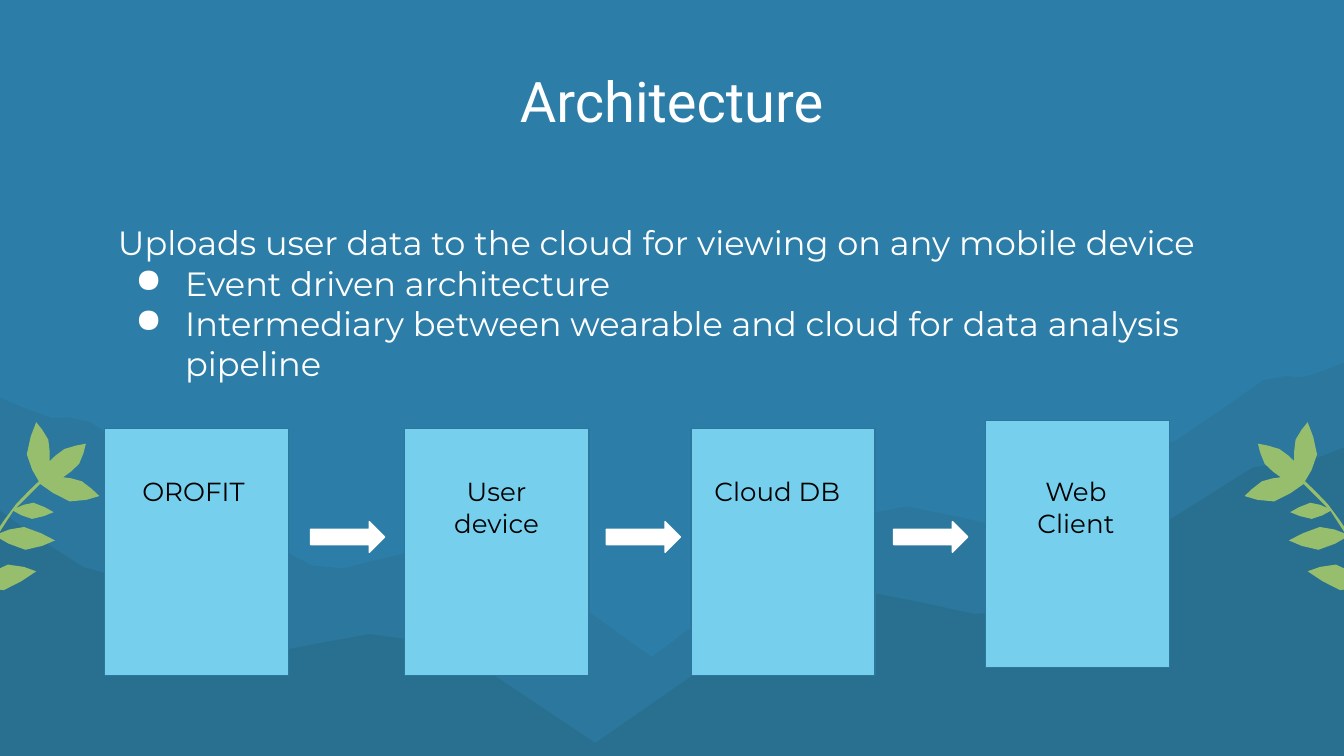
"""Builds the architecture slide: a wavy backdrop, bullet text and a four-step flow."""
import dataclasses

import pptx
import pptx.dml.color
import pptx.enum.shapes
import pptx.enum.text
import pptx.oxml
import pptx.oxml.ns
import pptx.util

Cm = pptx.util.Cm
Pt = pptx.util.Pt
SHAPE = pptx.enum.shapes.MSO_SHAPE
ALIGN = pptx.enum.text.PP_ALIGN
ANCHOR = pptx.enum.text.MSO_ANCHOR
AUTO = pptx.enum.text.MSO_AUTO_SIZE


@dataclasses.dataclass(frozen=True)
class Theme:
    """Colours, fonts and type sizes of the slide."""
    sky: str = "2C7EA8"
    far_hill: str = "2B779D"
    near_hill: str = "297090"
    leaf: str = "97BE6D"
    card: str = "76D0ED"
    light: str = "FFFFFF"
    dark: str = "000000"
    head_font: str = "Roboto"
    text_font: str = "Montserrat"
    title_size: int = 30
    body_size: int = 18
    label_size: int = 14
    line_width: float = 0.75


THEME = Theme()

FAR_RIDGE = [
    [(0, 29.6), (3.8, 31.1), (6.7, 31.4), (13.2, 35.8), (18.8, 37.5), (21.5, 41.2),
     (25.5, 42.3), (32.5, 40.7), (39, 42.1)],
    [(39, 42.1), (48.5, 48.9)],
    [(48.5, 48.9), (61.6, 39.1)],
    [(61.6, 39.1), (67.5, 37.7), (74.5, 39.2), (79.1, 38.2), (81.9, 34.5),
     (87.5, 32.8), (94, 28.3), (96.9, 28.1), (100, 27)],
]
NEAR_RIDGE = [
    [(0, 38), (6.2, 42.2), (12.1, 43.9), (15.1, 47.6), (19.5, 48.7), (27.5, 47.2),
     (34, 48.4)],
    [(34, 48.4), (44.3, 55.3)],
    [(44.3, 55.3), (58.4, 45.5)],
    [(58.4, 45.5), (64.8, 44.1), (72.5, 45.7), (77.3, 44.6), (80.3, 40.9),
     (86.2, 39.2), (93.2, 34.8), (96.4, 34.6), (100, 33.3)],
]
SPRIG = [
    [(51, 0), (44, 24), (53, 44)],
    [(53, 44), (36, 61), (21, 82)],
    [(21, 82), (20, 60), (5, 42)],
    [(5, 42), (4, 66), (19, 84)],
    [(19, 84), (1, 161), (26, 268)],
    [(26, 268), (4, 180), (8, 121)],
    [(8, 121), (27, 125), (51, 111)],
    [(51, 111), (30, 106), (8, 118)],
    [(8, 118), (21, 85)],
    [(21, 85), (43, 95), (65, 88)],
    [(65, 88), (42, 78), (23, 83)],
    [(23, 83), (34, 66)],
    [(34, 66), (48, 72), (64, 67)],
    [(64, 67), (49, 60), (36, 64)],
    [(36, 64), (54, 46)],
    [(54, 46), (76, 59), (98, 55)],
    [(98, 55), (85, 44), (71, 41)],
    [(71, 41), (83, 31), (88, 16)],
    [(88, 16), (72, 20), (61, 29)],
    [(61, 29), (60, 13), (51, 0)],
]


def rgb(value):
    """Return the colour for a hex string."""
    return pptx.dml.color.RGBColor.from_string(value)


def apply(obj, **values):
    """Set each named attribute on the object."""
    for name, value in values.items():
        setattr(obj, name, value)


def smooth_outline(runs, steps=2):
    """Return points on a smooth curve through each run, with corners between runs."""
    points = [runs[0][0]]
    for run in runs:
        padded = [run[0], *run, run[-1]]
        count = steps if len(run) > 2 else 1
        for a, b, c, d in zip(padded, padded[1:], padded[2:], padded[3:]):
            for t in (i / count for i in range(1, count + 1)):
                points.append(tuple(
                    q + t * (r - p) / 2 + t**2 * (2 * p - 5 * q + 4 * r - s) / 2
                    + t**3 * (3 * q - p - 3 * r + s) / 2
                    for p, q, r, s in zip(a, b, c, d)))
    return points


def paint(sp, fill, line=None):
    """Give a shape a flat fill and an optional outline."""
    sp.shadow.inherit = False
    sp.fill.solid()
    sp.fill.fore_color.rgb = rgb(fill)
    if line:
        apply(sp.line, width=Pt(THEME.line_width))
        sp.line.color.rgb = rgb(line)
    else:
        sp.line.fill.background()


def add_outline(s, points, left, top, unit, fill):
    """Draw a closed outline whose points are counted in the given unit."""
    points = [(Cm(left + x * unit), Cm(top + y * unit)) for x, y in points]
    builder = s.shapes.build_freeform(*points[0], scale=1.0)
    builder.add_line_segments(points[1:], close=True)
    paint(builder.convert_to_shape(), fill)


def add_text(s, box, lines, font, size, color, align=ALIGN.LEFT, **frame):
    """Place a wrapped text box and return its paragraphs."""
    tf = s.shapes.add_textbox(*map(Cm, box)).text_frame
    inset = dict.fromkeys(("margin_left", "margin_top", "margin_right", "margin_bottom"), Cm(0.25))
    apply(tf, **{"word_wrap": True, **inset, **frame})
    for i, line in enumerate(lines):
        p = tf.add_paragraph() if i else tf.paragraphs[0]
        p.alignment = align
        r = p.add_run()
        r.text = line
        apply(r.font, name=font, size=Pt(size))
        r.font.color.rgb = rgb(color)
    return tf.paragraphs


def add_bullet(p):
    """Turn a paragraph into a hanging bullet point."""
    pPr = p._p.get_or_add_pPr()
    pPr.set("marL", str(Cm(1.27)))
    pPr.set("indent", str(-Cm(0.94)))
    ns = pptx.oxml.ns.nsdecls("a")
    pPr.append(pptx.oxml.parse_xml(f'<a:buClr {ns}><a:srgbClr val="{THEME.light}"/></a:buClr>'))
    pPr.append(pptx.oxml.parse_xml(f'<a:buChar {ns} char="●"/>'))


def draw_backdrop(s, box):
    """Draw two hill layers and a mirrored pair of sprigs in the box."""
    left, top, width, height = box
    unit = width / 100
    layers = [(FAR_RIDGE, 55.3, THEME.far_hill), (NEAR_RIDGE, height / unit, THEME.near_hill)]
    for ridge, floor, fill in layers:
        add_outline(s, smooth_outline(ridge) + [(100, floor), (0, floor)], left, top, unit, fill)
    sprig = smooth_outline(SPRIG)
    mirrored = [(-x, y) for x, y in sprig]
    add_outline(s, mirrored, left + width + 0.61, top + 7.98, 0.0254, THEME.leaf)
    add_outline(s, sprig, left - 0.61, top + 7.98, 0.0254, THEME.leaf)


def draw_title(s, box):
    """Write the centred heading in the box."""
    add_text(s, box, ["Architecture"], THEME.head_font, THEME.title_size, THEME.light,
             ALIGN.CENTER, vertical_anchor=ANCHOR.MIDDLE)


def draw_body(s, box):
    """Write the lead sentence and its bullet points in the box."""
    lines = ["Uploads user data to the cloud for viewing on any mobile device",
             "Event driven architecture",
             "Intermediary between wearable and cloud for data analysis pipeline"]
    paragraphs = add_text(s, box, lines, THEME.text_font, THEME.body_size, THEME.light,
                          margin_top=Cm(1.02))
    for p in paragraphs[1:]:
        add_bullet(p)


def draw_flow(s, box):
    """Draw the labelled cards and the arrows between them in the box."""
    left, top, width, height = box
    card_width, card_height = 3.48, height - 0.15
    cards = [("OROFIT", 0, 0.15, 0.46, 2.77, ALIGN.LEFT),
             ("User device", 5.67, 0.15, 6.02, 2.77, ALIGN.CENTER),
             ("Cloud DB", 11.08, 0.15, 11.2, 3.02, ALIGN.CENTER),
             ("Web Client", width - card_width, 0, 16.97, 2.77, ALIGN.CENTER)]
    for label, x, y, label_x, label_width, align in cards:
        sp = s.shapes.add_shape(SHAPE.RECTANGLE, *map(Cm, (left + x, top + y, card_width, card_height)))
        paint(sp, THEME.card, THEME.far_hill)
        add_text(s, (left + label_x, top + 0.79, label_width, 1.7), [label], THEME.text_font,
                 THEME.label_size, THEME.dark, align, auto_size=AUTO.SHAPE_TO_FIT_TEXT)
    for x in (3.89, 9.48, 14.91):
        sp = s.shapes.add_shape(SHAPE.RIGHT_ARROW, *map(Cm, (left + x, top + 1.91, 1.4, 0.58)))
        paint(sp, THEME.light, THEME.light)


def main():
    """Build and save the presentation."""
    prs = pptx.Presentation()
    apply(prs, slide_width=Cm(25.4), slide_height=Cm(14.29))
    s = prs.slides.add_slide(prs.slide_layouts[6])
    s.background.fill.solid()
    s.background.fill.fore_color.rgb = rgb(THEME.sky)
    draw_backdrop(s, (0, 0, 25.4, 14.29))
    draw_body(s, (1.98, 3.18, 21.84, 9.6))
    draw_title(s, (1.9, 1.47, 21.59, 0.84))
    draw_flow(s, (1.98, 7.95, 20.12, 4.82))
    prs.save("out.pptx")


if __name__ == "__main__":
    main()
